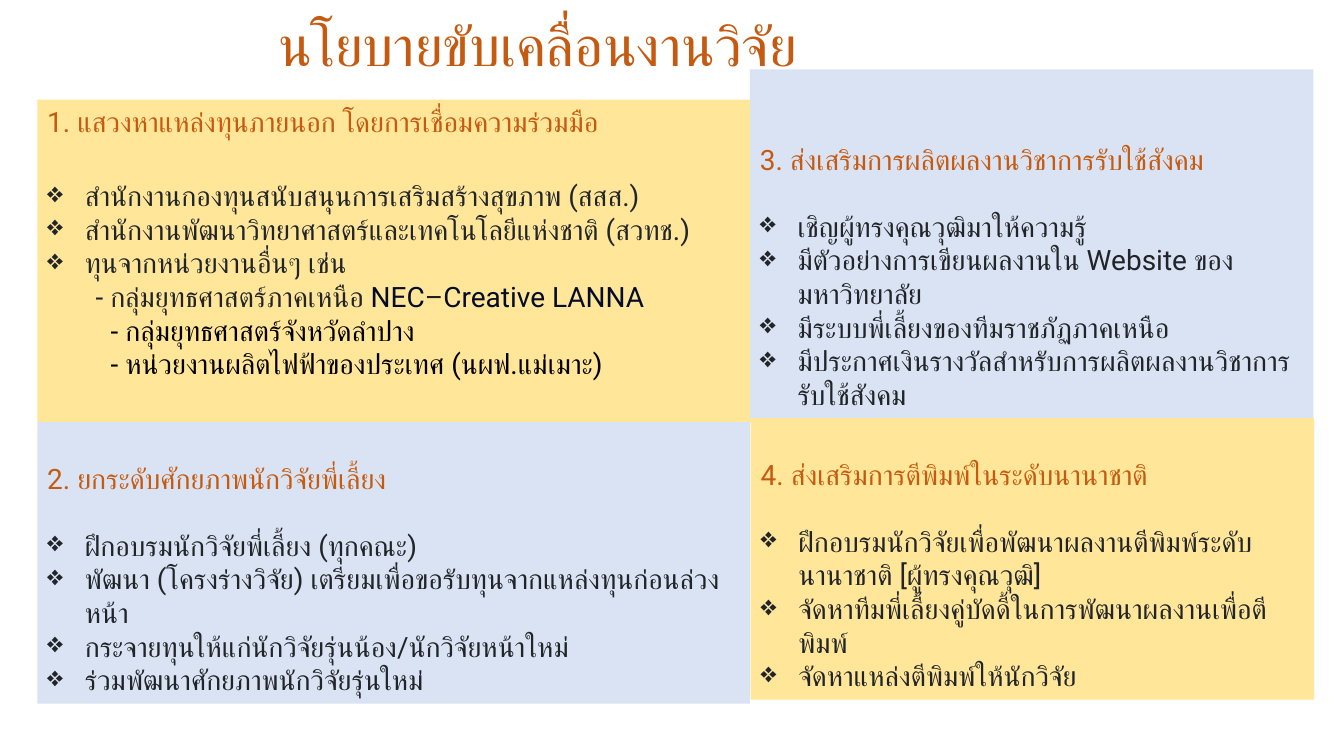
from lxml import etree
from pptx import Presentation
from pptx.dml.color import RGBColor
from pptx.enum.lang import MSO_LANGUAGE_ID
from pptx.enum.shapes import MSO_SHAPE
from pptx.enum.text import MSO_ANCHOR, MSO_AUTO_SIZE, PP_ALIGN
from pptx.oxml.ns import qn
from pptx.util import Cm, Pt

RECT = MSO_SHAPE.RECTANGLE
TOP = MSO_ANCHOR.TOP
LEFT = PP_ALIGN.LEFT
FIXED = MSO_AUTO_SIZE.NONE
THAI = MSO_LANGUAGE_ID.THAI

FONT = "Roboto"
RUST = RGBColor(0xC5, 0x5A, 0x11)
GOLD = RGBColor(0xFF, 0xE6, 0x99)
BLUE = RGBColor(0xDA, 0xE3, 0xF3)
INK = RGBColor(0x21, 0x25, 0x29)
NAVY = RGBColor(0x04, 0x0C, 0x28)
GREY = RGBColor(0x1F, 0x1F, 0x1F)
BLACK = RGBColor(0, 0, 0)

# Box in cm, fill, top inset in cm, gap under the heading in pt, heading, bullets
PANELS = [
    ((0.94, 2.51, 18.01, 8.13), GOLD, 0.13, 28.8,
     "1. แสวงหาแหล่งทุนภายนอก โดยการเชื่อมความร่วมมือ",
     ["สำนักงานกองทุนสนับสนุนการเสริมสร้างสุขภาพ (สสส.)",
      "สำนักงานพัฒนาวิทยาศาสตร์และเทคโนโลยีแห่งชาติ (สวทช.)",
      "ทุนจากหน่วยงานอื่นๆ เช่น"]),
    ((0.94, 10.64, 17.96, 7.09), BLUE, 0.98, 24,
     "2. ยกระดับศักยภาพนักวิจัยพี่เลี้ยง",
     ["ฝึกอบรมนักวิจัยพี่เลี้ยง (ทุกคณะ)",
      "พัฒนา (โครงร่างวิจัย) เตรียมเพื่อขอรับทุนจากแหล่งทุนก่อนล่วงหน้า",
      "กระจายทุนให้แก่นักวิจัยรุ่นน้อง/นักวิจัยหน้าใหม่",
      "ร่วมพัฒนาศักยภาพนักวิจัยรุ่นใหม่"]),
    ((18.9, 1.75, 14.2, 8.81), BLUE, 1.83, 24,
     "3. ส่งเสริมการผลิตผลงานวิชาการรับใช้สังคม",
     ["เชิญผู้ทรงคุณวุฒิมาให้ความรู้",
      "มีตัวอย่างการเขียนผลงานใน Website ของมหาวิทยาลัย",
      "มีระบบพี่เลี้ยงของทีมราชภัฏภาคเหนือ",
      "มีประกาศเงินรางวัลสำหรับการผลิตผลงานวิชาการรับใช้สังคม"]),
    ((18.92, 10.54, 14.2, 7.09), GOLD, 0.98, 24,
     "4. ส่งเสริมการตีพิมพ์ในระดับนานาชาติ",
     ["ฝึกอบรมนักวิจัยเพื่อพัฒนาผลงานตีพิมพ์ระดับนานาชาติ [ผู้ทรงคุณวุฒิ]",
      "จัดหาทีมพี่เลี้ยงคู่บัดดี้ในการพัฒนาผลงานเพื่อตีพิมพ์",
      "จัดหาแหล่งตีพิมพ์ให้นักวิจัย"]),
]

# Level, left margin in cm, runs
FUNDS = [
    (0, 1.22, [("- กลุ่มยุทธศาสตร์ภาคเหนือ ", INK), ("NEC", NAVY),
               ("–", GREY), ("Creative LANNA", NAVY)]),
    (1, 1.6, [("- กลุ่มยุทธศาสตร์จังหวัดลำปาง", BLACK)]),
    (1, 1.6, [("- หน่วยงานผลิตไฟฟ้าของประเทศ (นผฟ.แม่เมาะ)", BLACK)]),
]


def add_run(para, text, color, size=20):
    run = para.add_run()
    run.text = text
    font = run.font
    font.size = Pt(size)
    font.color.rgb = color
    font.name = FONT
    font.language_id = THAI
    etree.SubElement(font._element, qn("a:cs"), typeface=FONT)


def indent(para, margin, first=0):
    props = para._p.get_or_add_pPr()
    props.set("marL", str(Cm(margin)))
    props.set("indent", str(Cm(first)))
    return props


def add_bullet(frame, text, gap):
    para = frame.add_paragraph()
    para.alignment = LEFT
    para.space_before = Pt(gap)
    props = indent(para, 0.95, -0.95)
    etree.SubElement(props, qn("a:buChar"), char="❖")
    add_run(para, text, INK)


def add_funds(frame):
    """List the sources of funds under the last bullet."""
    for level, margin, runs in FUNDS:
        para = frame.add_paragraph()
        para.alignment = LEFT
        para.level = level
        indent(para, margin)
        for text, color in runs:
            add_run(para, text, color)


def add_panel(slide, box, fill, inset, gap, heading, bullets):
    panel = slide.shapes.add_shape(RECT, *map(Cm, box))
    panel.shadow.inherit = False
    panel.fill.solid()
    panel.fill.fore_color.rgb = fill
    panel.line.fill.background()
    frame = panel.text_frame
    frame.word_wrap = True
    frame.vertical_anchor = TOP
    frame.margin_top = Cm(inset)
    para = frame.paragraphs[0]
    para.alignment = LEFT
    add_run(para, heading, RUST)
    for i, text in enumerate(bullets):
        add_bullet(frame, text, 0 if i else gap)
    return frame


def set_title(slide, text):
    title = slide.shapes.title
    title.left, title.top = Cm(6.76), Cm(0.13)
    title.width, title.height = Cm(16.38), Cm(1.96)
    frame = title.text_frame
    frame.word_wrap = False
    frame.auto_size = FIXED
    frame.vertical_anchor = TOP
    para = frame.paragraphs[0]
    para.alignment = LEFT
    add_run(para, text, RUST, 40)


def main():
    deck = Presentation()
    deck.slide_width, deck.slide_height = Cm(33.87), Cm(19.05)
    slide = deck.slides.add_slide(deck.slide_layouts[5])
    set_title(slide, "นโยบายขับเคลื่อนงานวิจัย")
    frames = [add_panel(slide, *panel) for panel in PANELS]
    add_funds(frames[0])
    deck.save("out.pptx")


if __name__ == "__main__":
    main()
